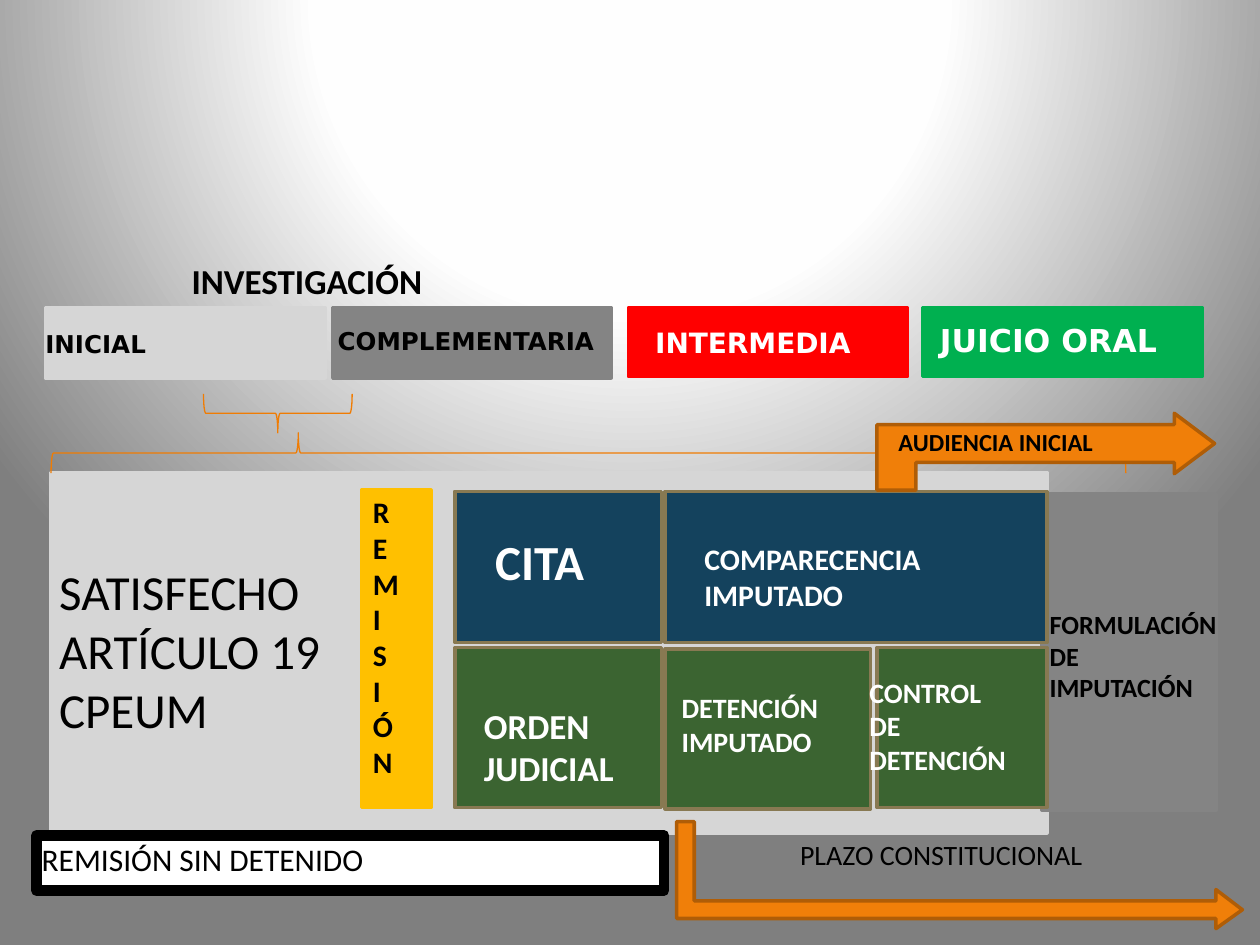
from dataclasses import dataclass

from pptx import Presentation
from pptx.dml.color import RGBColor
from pptx.enum.shapes import MSO_SHAPE
from pptx.enum.text import MSO_ANCHOR, PP_ALIGN
from pptx.oxml import parse_xml
from pptx.util import Inches, Pt


@dataclass(frozen=True)
class Theme:
    """Colours, fonts and type sizes of the slide."""
    black: str = "000000"
    white: str = "FFFFFF"
    pale: str = "D6D6D6"
    gray: str = "848484"
    red: str = "FF0000"
    emerald: str = "00B050"
    amber: str = "FFC000"
    navy: str = "14425D"
    forest: str = "3B6431"
    bronze: str = "887952"
    orange: str = "F07F09"
    rust: str = "AF5D07"
    brace: str = "F07C03"
    body: str = "Calibri"
    phase: str = "DejaVu Sans"
    huge: int = 28
    large: int = 20
    medium: int = 18
    step: int = 17
    small: int = 16
    note: int = 15
    tiny: int = 14
    stops: tuple = ((0, "FFFFFF"), (40, "FEFEFE"), (100, "7F7F7F"))


class SlideBuilder:
    """Draws styled elements on the current slide."""

    def __init__(self, page, theme):
        self.page = page
        self.theme = theme

    def background(self):
        """Fill the page with a radial gradient."""
        stops = "".join(
            f'<a:gs pos="{position * 1000}"><a:srgbClr val="{color}"/></a:gs>'
            for position, color in self.theme.stops)
        gradient = parse_xml(
            '<a:gradFill xmlns:a="http://schemas.openxmlformats.org/drawingml/2006/main" '
            f'rotWithShape="1"><a:gsLst>{stops}</a:gsLst><a:path path="circle">'
            '<a:fillToRect l="50000" t="-80000" r="50000" b="180000"/>'
            '</a:path></a:gradFill>')
        self.page.background.fill.solid()
        solid = self.page.element.xpath(".//p:bgPr/a:solidFill")[0]
        solid.getparent().replace(solid, gradient)

    def paint(self, shape, fill, line, width=2):
        """Set fill and outline, leaving out whichever is None."""
        shape.shadow.inherit = False
        for target, color in ((shape.fill, fill), (shape.line.fill, line)):
            if color:
                target.solid()
                target.fore_color.rgb = RGBColor.from_string(color)
            else:
                target.background()
        if line:
            shape.line.width = Pt(width)
        return shape

    def rectangle(self, area, fill, line=None, width=2):
        """Add a plain rectangle."""
        box = self.page.shapes.add_shape(MSO_SHAPE.RECTANGLE, *map(Inches, area))
        return self.paint(box, fill, line, width)

    def add_lines(self, box, lines, size, color, bold=True, font=None):
        """Put one paragraph per line into a box."""
        frame = box.text_frame
        frame.word_wrap = True
        frame.vertical_anchor = MSO_ANCHOR.TOP
        frame.margin_left = frame.margin_right = Inches(0.04)
        frame.margin_top = frame.margin_bottom = Inches(0.04)
        for index, line in enumerate(lines):
            para = frame.add_paragraph() if index else frame.paragraphs[0]
            para.alignment = PP_ALIGN.LEFT
            span = para.add_run()
            span.text = line
            span.font.size = Pt(size)
            span.font.name = font or self.theme.body
            span.font.bold = bold
            span.font.color.rgb = RGBColor.from_string(color)

    def label(self, area, lines, size, color, bold=True, font=None):
        """Add a text box."""
        box = self.page.shapes.add_textbox(*map(Inches, area))
        self.add_lines(box, lines, size, color, bold, font)

    def arrow(self, points):
        """Add a bent block arrow from its outline."""
        start, *rest = [(Inches(x), Inches(y)) for x, y in points]
        builder = self.page.shapes.build_freeform(*start)
        builder.add_line_segments(rest, close=True)
        self.paint(builder.convert_to_shape(), self.theme.orange, self.theme.rust)

    def brace(self, area, rotation, tip):
        """Add a turned brace with its tip at a share of its length."""
        shape = self.page.shapes.add_shape(MSO_SHAPE.LEFT_BRACE, *map(Inches, area))
        shape.rotation = rotation
        shape.adjustments[0] = 0.06
        shape.adjustments[1] = tip
        self.paint(shape, None, self.theme.brace, 0.75)


def draw_phases(builder):
    """Draw the row of procedural phases."""
    theme = builder.theme
    phases = (
        ("INICIAL", 0.36, 2.22, 0.56, (0.32, 2.57, 2.26, 0.33), theme.pale, theme.black, theme.tiny),
        ("COMPLEMENTARIA", 2.64, 2.21, 0.56, (2.64, 2.55, 2.21, 0.33), theme.gray, theme.black, theme.tiny),
        ("INTERMEDIA", 4.99, 2.21, 0.55, (5.16, 2.54, 1.88, 0.37), theme.red, theme.white, theme.small),
        ("JUICIO ORAL", 7.32, 2.22, 0.55, (7.42, 2.51, 2.13, 0.4), theme.emerald, theme.white, theme.medium),
    )
    for name, left, width, height, area, fill, color, size in phases:
        builder.rectangle((left, 2.44, width, height), fill, fill)
        builder.label(area, [name], size, color, font=theme.phase)
    builder.label((1.48, 2.02, 2.42, 0.39), ["INVESTIGACIÓN"], theme.large, theme.black)


def draw_steps(builder):
    """Draw the panel with the steps of the initial phase."""
    theme = builder.theme
    for area, fill in (((0.4, 3.75, 7.91, 2.86), theme.pale),
                       ((2.87, 3.89, 0.55, 2.52), theme.amber),
                       ((8.27, 3.92, 1.38, 2.51), theme.gray)):
        builder.rectangle(area, fill, fill)
    builder.label((0.43, 4.42, 2.36, 1.5), ["SATISFECHO", "ARTÍCULO 19 CPEUM"],
                  theme.huge, theme.black, bold=False)
    builder.label((2.92, 3.88, 0.59, 2.47), "REMISIÓN", theme.step, theme.black)
    builder.label((8.29, 4.79, 1.47, 0.83), ["FORMULACIÓN", "DE", "IMPUTACIÓN"],
                  theme.note, theme.black)
    steps = (
        ((3.61, 3.9, 1.64, 1.2), theme.navy, (3.89, 4.18, 1.28, 0.56), ["CITA"], theme.huge),
        ((5.28, 3.9, 3.03, 1.2), theme.navy, (5.55, 4.25, 2.54, 0.69),
         ["COMPARECENCIA", "IMPUTADO"], theme.step),
        ((3.61, 5.14, 1.64, 1.27), theme.forest, (3.8, 5.55, 1.45, 0.69),
         ["ORDEN", "JUDICIAL"], theme.large),
        ((5.28, 5.15, 1.63, 1.27), theme.forest, (5.37, 5.44, 1.54, 0.61),
         ["DETENCIÓN", "IMPUTADO"], theme.small),
        ((6.96, 5.14, 1.35, 1.27), theme.forest, (6.86, 5.32, 1.54, 0.87),
         ["CONTROL", "DE", "DETENCIÓN"], theme.small),
    )
    for area, fill, text_area, lines, size in steps:
        builder.rectangle(area, fill, theme.bronze)
        builder.label(text_area, lines, size, theme.white)


def draw_flow(builder):
    """Draw the braces, the arrows and their captions."""
    theme = builder.theme
    builder.arrow([(5.51, 6.52), (5.51, 7.15), (9.65, 7.15), (9.65, 7.06), (9.86, 7.22),
                   (9.65, 7.37), (9.65, 7.29), (5.37, 7.29), (5.37, 6.52)])
    builder.label((6.31, 6.61, 2.85, 0.35), ["PLAZO CONSTITUCIONAL"],
                  theme.small, theme.black, bold=False)
    banner = builder.rectangle((0.29, 6.63, 4.98, 0.44), theme.white, theme.black, 6)
    builder.add_lines(banner, ["REMISIÓN SIN DETENIDO"], theme.medium, theme.black, bold=False)
    builder.brace((2.05, 2.69, 0.31, 1.18), 270, 0.5)
    builder.brace((4.51, -0.67, 0.32, 8.53), 90, 0.77)
    builder.arrow([(7.27, 3.89), (7.27, 3.67), (9.32, 3.67), (9.32, 3.76), (9.64, 3.52),
                   (9.32, 3.28), (9.32, 3.37), (6.96, 3.37), (6.96, 3.89)])
    builder.label((7.09, 3.35, 2.21, 0.36), ["AUDIENCIA INICIAL"], theme.tiny, theme.black)


def main():
    """Build and save the deck."""
    deck = Presentation()
    deck.slide_width, deck.slide_height = Inches(10), Inches(7.5)
    builder = SlideBuilder(deck.slides.add_slide(deck.slide_layouts[6]), Theme())
    builder.background()
    draw_phases(builder)
    draw_steps(builder)
    draw_flow(builder)
    deck.save("out.pptx")


if __name__ == "__main__":
    main()
